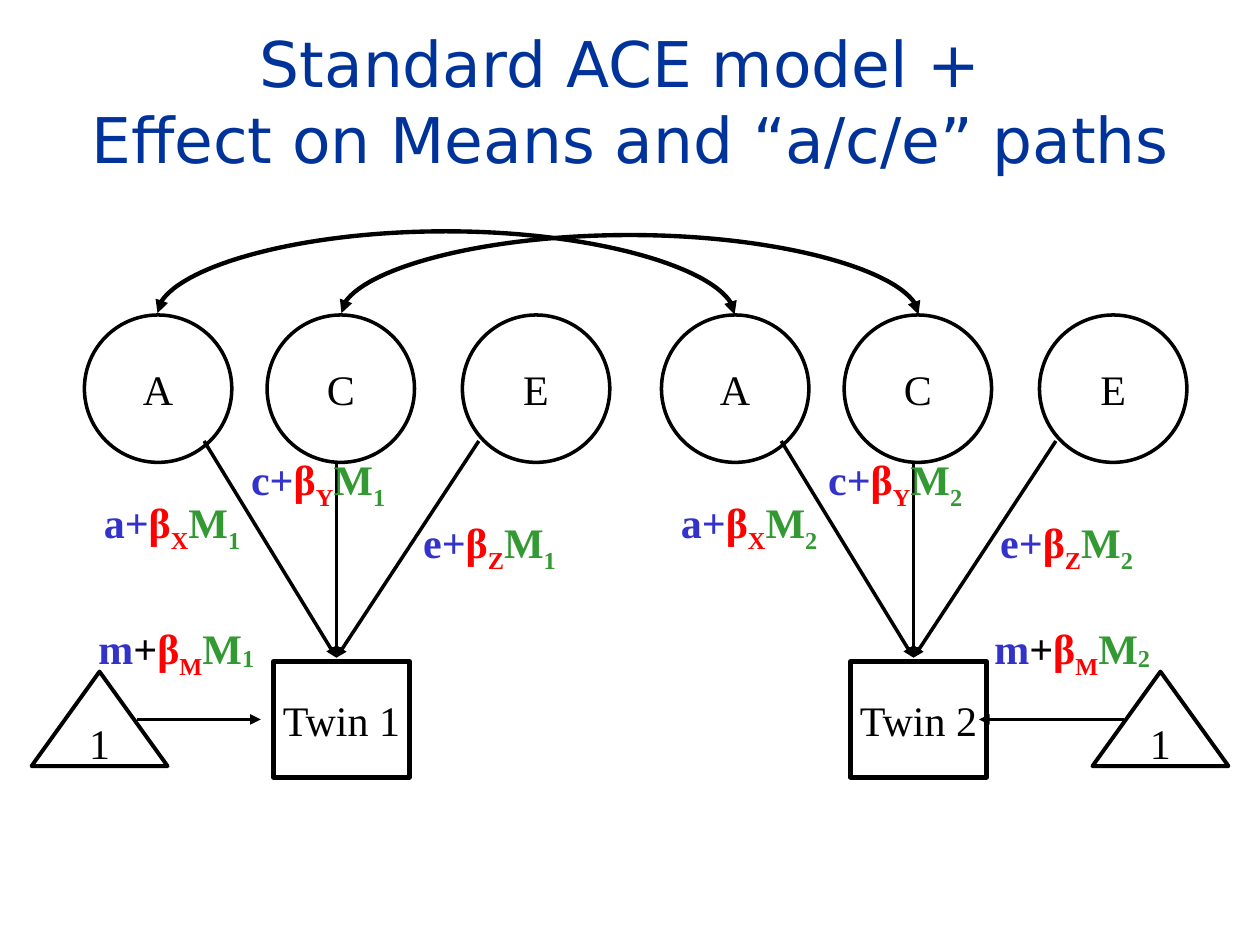
from pptx import Presentation
from pptx.dml.color import RGBColor
from pptx.enum.shapes import MSO_CONNECTOR, MSO_SHAPE
from pptx.enum.text import MSO_ANCHOR, PP_ALIGN
from pptx.oxml.ns import qn
from pptx.util import Inches, Pt
from lxml.etree import SubElement

BLACK, WHITE, NAVY = "000000", "FFFFFF", "003399"
BLUE, RED, GREEN = "3333CC", "FF0000", "339933"


def write(shape, *runs, size=24, font="Times New Roman", bold=False, wrap=True):
    frame = shape.text_frame
    frame.word_wrap = wrap
    frame.vertical_anchor = MSO_ANCHOR.MIDDLE
    para = frame.paragraphs[0]
    para.alignment = PP_ALIGN.CENTER
    for words, color, base in runs:
        for row, part in enumerate(words.split("\n")):
            if row:
                para.add_line_break()
            run = para.add_run()
            run.text = part
            run.font.size = Pt(size)
            run.font.name = font
            run.font.bold = bold
            run.font.color.rgb = RGBColor.from_string(color)
            if base:
                run.font._element.set("baseline", str(base * 1000))


def style(shape, width, *ends):
    shape.line.color.rgb = RGBColor.from_string(BLACK)
    shape.line.width = Pt(width)
    if ends:
        for end in ends:
            SubElement(shape.line._get_or_add_ln(), qn("a:" + end), type="triangle")
        SubElement(shape._element.spPr, qn("a:effectLst"))
    else:
        shape.fill.solid()
        shape.fill.fore_color.rgb = RGBColor.from_string(WHITE)
        shape.shadow.inherit = False


deck = Presentation()
deck.slide_width, deck.slide_height = Inches(10), Inches(7.5)
slide = deck.slides.add_slide(deck.slide_layouts[5])
shapes = slide.shapes

title = shapes.title
title.left, title.top = Inches(0.42), Inches(0.17)
title.width, title.height = Inches(9.17), Inches(1.25)
write(title, ("Standard ACE model + \nEffect on Means and “a/c/e” paths", NAVY, 0),
      size=36, font="DejaVu Sans")

step = 4.58
paths = [("A", 0.67, 1.62, 3.5), ("C", 2.12, 2.67, 3.67), ("E", 3.67, 3.8, 3.5)]
for twin in range(2):
    shift = twin * step
    for name, left, x, y in paths:
        circle = shapes.add_shape(MSO_SHAPE.OVAL, Inches(left + shift), Inches(2.5),
                                  Inches(1.17), Inches(1.17))
        style(circle, 2)
        write(circle, (name, BLACK, 0), wrap=False)
    for name, left, x, y in paths:
        arrow = shapes.add_connector(MSO_CONNECTOR.STRAIGHT, Inches(x + shift), Inches(y),
                                     Inches(2.67 + shift), Inches(5.22))
        style(arrow, 2, "tailEnd")

thin = 0.01
for start, rise in [(1.25, 0.66), (2.71, 0.63)]:
    mid = start + step / 2
    curve = shapes.add_connector(MSO_CONNECTOR.CURVE, Inches(mid - thin / 2), Inches(0.2),
                                 Inches(mid + thin / 2), Inches(0.2 + step))
    style(curve, 2.5, "headEnd", "tailEnd")
    form = curve._element.spPr.find(qn("a:xfrm"))
    form.set("rot", "5400000")
    form.set("flipV", "1")
    guides = curve._element.spPr.find(qn("a:prstGeom")).get_or_add_avLst()
    SubElement(guides, qn("a:gd"), name="adj1", fmla=f"val {round(-rise / thin * 100000)}")

labels = [("a", "X", 0.67, 3.92), ("c", "Y", 1.83, 3.58), ("e", "Z", 3.19, 4.08)]
means = [(0.25, 1.09, 2.07, 0.58), (8.67, 8.92, 7.77, 7.69)]
for twin, (left, tail, tip, note) in enumerate(means):
    shift, num = twin * step, str(twin + 1)
    for path, sub, x, y in labels:
        label = shapes.add_textbox(Inches(x + shift), Inches(y), Inches(1.39), Inches(0.5))
        write(label, (path + "+", BLUE, 0), ("β", RED, 0), (sub, RED, -25),
              ("M", GREEN, 0), (num, GREEN, -25), bold=True)

    box = shapes.add_shape(MSO_SHAPE.RECTANGLE, Inches(2.17 + shift), Inches(5.25),
                           Inches(1.08), Inches(0.92))
    style(box, 2.5)
    write(box, ("Twin " + num, BLACK, 0), wrap=False)

    mean = shapes.add_shape(MSO_SHAPE.ISOSCELES_TRIANGLE, Inches(left), Inches(5.33),
                            Inches(1.08), Inches(0.75))
    style(mean, 2.25)
    write(mean, ("1", BLACK, 0), wrap=False)

    arrow = shapes.add_connector(MSO_CONNECTOR.STRAIGHT, Inches(tail), Inches(5.71),
                                 Inches(tip), Inches(5.71))
    style(arrow, 2, "tailEnd")

    label = shapes.add_textbox(Inches(note), Inches(4.92), Inches(1.64), Inches(0.5))
    write(label, ("m", BLUE, 0), ("+", BLACK, 0), ("β", RED, 0), ("M", RED, -25),
          ("M", GREEN, 0), (num, GREEN, -6), bold=True)

deck.save("out.pptx")
